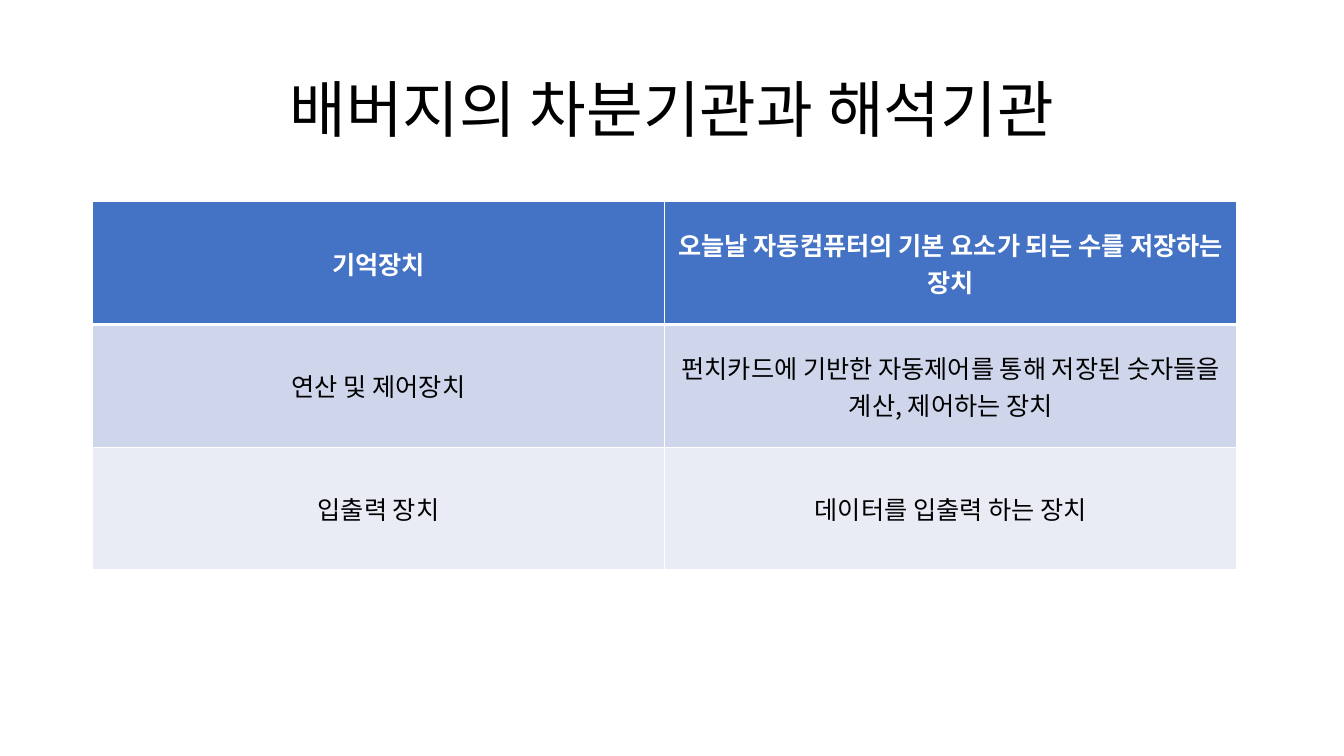
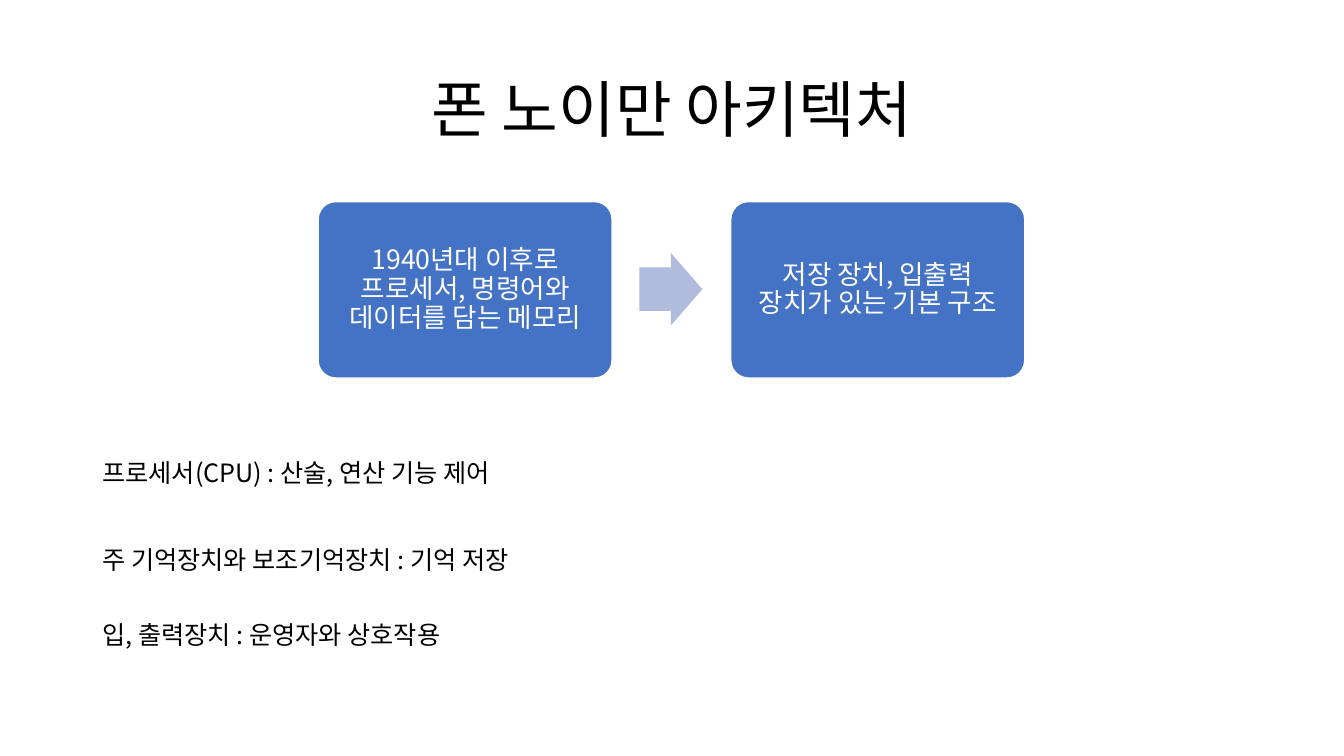
from dataclasses import dataclass

from lxml.etree import SubElement
from pptx import Presentation
from pptx.dml.color import RGBColor
from pptx.enum.shapes import MSO_SHAPE as Shape
from pptx.enum.text import MSO_ANCHOR as Anchor, MSO_AUTO_SIZE as AutoSize, PP_ALIGN as Align
from pptx.oxml.ns import qn
from pptx.util import Emu, Pt


@dataclass(frozen=True)
class Theme:
    font: str = "Noto Sans CJK KR"
    ink: str = "000000"
    white: str = "FFFFFF"
    blue: str = "4472C4"
    arrow: str = "B0BCDE"
    bands: tuple = ("4472C4", "CFD5EA", "E9EBF5")
    title_size: int = 44
    step_size: int = 19
    body_size: int = 18


theme = Theme()
PX = 9525  # EMU in one px, 96 px to the inch
LEFT, TOP = 88, 192  # left margin and top of the content


def px(*lengths):
    return [Emu(length * PX) for length in lengths]


def write(frame, text, size, color, align=Align.CENTER, spacing=None, bold=False, **frame_format):
    for name, value in frame_format.items():
        setattr(frame, name, value)
    paragraph = frame.paragraphs[0]
    paragraph.alignment, paragraph.line_spacing = align, spacing
    run = paragraph.add_run()
    run.text = text
    for name, value in {"name": theme.font, "size": Pt(size), "bold": bold}.items():
        setattr(run.font, name, value)
    run.font.color.rgb = RGBColor.from_string(color)
    SubElement(run.font._element, qn("a:ea"), typeface=theme.font)


deck = Presentation()
deck.slide_width, deck.slide_height = px(1280, 720)

# Slides and their shared title style
slides = []
for heading in ("배버지의 차분기관과 해석기관", "폰 노이만 아키텍처"):
    slide = deck.slides.add_slide(deck.slide_layouts[6])
    title = slide.shapes.add_textbox(*px(LEFT, 38, 1104, 139))
    write(title.text_frame, heading, theme.title_size, theme.ink, spacing=0.9,
          word_wrap=True, vertical_anchor=Anchor.MIDDLE)
    slides.append(slide)
engines, architecture = slides

# Table of the engine's parts
parts = [
    ("기억장치", "오늘날 자동컴퓨터의 기본 요소가 되는 수를 저장하는 장치"),
    ("연산 및 제어장치", "펀치카드에 기반한 자동제어를 통해 저장된 숫자들을 계산, 제어하는 장치"),
    ("입출력 장치", "데이터를 입출력 하는 장치"),
]
parts_table = engines.shapes.add_table(len(parts), 2, *px(LEFT, TOP, 1090, 351)).table
for row, (texts, band) in enumerate(zip(parts, theme.bands)):
    is_header = row == 0
    # The rule under the header is thicker than the others
    rules = {"lnL": 1, "lnR": 1, "lnT": 3 if row == 1 else 1, "lnB": 3 if is_header else 1}
    for column, text in enumerate(texts):
        cell = parts_table.cell(row, column)
        cell.vertical_anchor = Anchor.MIDDLE
        write(cell.text_frame, text, theme.body_size,
              theme.white if is_header else theme.ink, bold=is_header)
        cell_format = cell._tc.get_or_add_tcPr()
        for side, points in rules.items():
            rule = SubElement(cell_format, qn(f"a:{side}"), w=str(Pt(points)))
            SubElement(SubElement(rule, qn("a:solidFill")), qn("a:srgbClr"), val=theme.white)
        cell.fill.solid()
        cell.fill.fore_color.rgb = RGBColor.from_string(band)

# Two steps with an arrow between them
STEP_LEFT, STEP_WIDTH, STEP_HEIGHT, STEP_PITCH = 303, 280, 168, 393
ARROW_WIDTH, ARROW_HEIGHT = 60, 69
steps = [
    (Shape.ROUNDED_RECTANGLE, (STEP_LEFT + index * STEP_PITCH, TOP, STEP_WIDTH, STEP_HEIGHT),
     [0.1], theme.blue, text)
    for index, text in enumerate(("1940년대 이후로 프로세서, 명령어와 데이터를 담는 메모리",
                                  "저장 장치, 입출력 장치가 있는 기본 구조"))
]
arrow = (Shape.RIGHT_ARROW,
         (609, TOP + (STEP_HEIGHT - ARROW_HEIGHT) // 2, ARROW_WIDTH, ARROW_HEIGHT),
         [0.6, 0.5], theme.arrow, None)
inset, = px(8)
step_format = {f"margin_{side}": inset for side in ("left", "top", "right", "bottom")}
for kind, box, adjustments, color, text in (*steps, arrow):
    step = architecture.shapes.add_shape(kind, *px(*box))
    step.shadow.inherit = False
    for index, value in enumerate(adjustments):
        step.adjustments[index] = value
    step.fill.solid()
    step.fill.fore_color.rgb = RGBColor.from_string(color)
    if text:
        step.line.color.rgb = RGBColor.from_string(theme.white)
        step.line.width = Pt(1)
        write(step.text_frame, text, theme.step_size, theme.white, spacing=0.9,
              word_wrap=True, vertical_anchor=Anchor.MIDDLE, **step_format)
    else:
        step.line.fill.background()

# Roles of the units
roles = {
    431: "프로세서(CPU) : 산술, 연산 기능 제어",
    514: "주 기억장치와 보조기억장치 : 기억 저장",
    585: "입, 출력장치 : 운영자와 상호작용",
}
for top, text in roles.items():
    role = architecture.shapes.add_textbox(*px(LEFT, top, 579, 38))
    write(role.text_frame, text, theme.body_size, theme.ink, Align.LEFT,
          word_wrap=True, auto_size=AutoSize.SHAPE_TO_FIT_TEXT)

deck.save("out.pptx")
